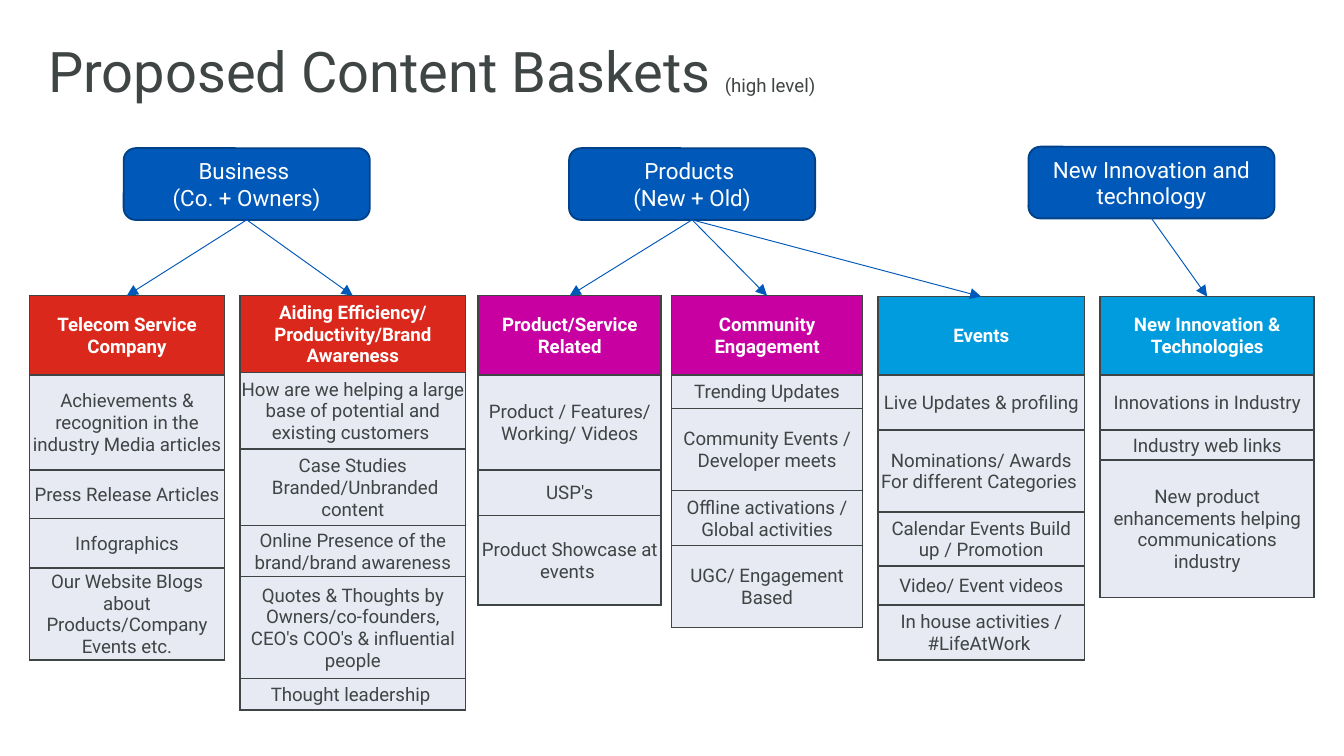
from dataclasses import dataclass

from lxml.etree import SubElement
from pptx import Presentation
from pptx.dml.color import RGBColor
from pptx.enum.shapes import MSO_CONNECTOR, MSO_SHAPE
from pptx.enum.text import MSO_ANCHOR, MSO_AUTO_SIZE, PP_ALIGN
from pptx.oxml.ns import qn
from pptx.slide import Slide
from pptx.table import _Cell
from pptx.text.text import TextFrame
from pptx.util import Pt

COLORS = {
    "ink": "3F4444", "white": "FFFFFF", "theme": "0059B9", "theme_edge": "004289",
    "red": "DA281C", "magenta": "C800A1", "cyan": "009CDE", "item": "E7EAF3",
}
FONT = "Roboto"
THEME_WIDTH, THEME_HEIGHT = 131.8, 38.4
FRAME_FORMAT = {
    "margin_left": Pt(5), "margin_right": Pt(5), "margin_top": Pt(3), "margin_bottom": Pt(3),
    "vertical_anchor": MSO_ANCHOR.MIDDLE, "word_wrap": True, "auto_size": MSO_AUTO_SIZE.NONE,
}
CELL_FORMAT = {
    "margin_left": Pt(0.7), "margin_right": Pt(0.7), "margin_top": Pt(0.7), "margin_bottom": 0,
    "vertical_anchor": MSO_ANCHOR.MIDDLE,
}


@dataclass
class Basket:
    """A one-column table: a coloured heading and its content items."""
    left: float
    top: float
    width: float
    color: str
    rows: list[tuple[float, str]]


@dataclass
class Theme:
    left: float
    top: float
    label: str
    baskets: list[Basket]


THEMES = [
    Theme(66.3, 79.4, "Business \v(Co. + Owners)", [
        Basket(15.8, 158.4, 104.4, "red", [
            (42.5, "Telecom Service Company"),
            (51, "Achievements & recognition in the industry Media articles"),
            (25.9, "Press Release Articles"),
            (26.6, "Infographics"),
            (49.2, "Our Website Blogs about Products/Company Events etc."),
        ]),
        Basket(128.6, 158.4, 120.8, "red", [
            (41.2, "Aiding Efficiency/ Productivity/Brand Awareness"),
            (41, "How are we helping a large base of potential and existing customers "),
            (41, "Case Studies\v Branded/Unbranded content"),
            (27.4, "Online Presence of the brand/brand awareness"),
            (54.6, "Quotes & Thoughts by Owners/co-founders, CEO's COO's & influential people"),
            (17, "Thought leadership "),
        ]),
    ]),
    Theme(304.9, 79.4, "Products \n(New + Old)", [
        Basket(256.2, 158.4, 98, "magenta", [
            (42.5, "Product/Service Related"),
            (51, "Product / Features/ Working/ Videos"),
            (24.3, "USP's"),
            (48, "Product Showcase at events "),
        ]),
        Basket(359.8, 158.4, 102.2, "magenta", [
            (42.5, "Community Engagement"),
            (18, "Trending Updates"),
            (44, "Community Events / Developer meets"),
            (29.4, "Offline activations / Global activities"),
            (44, "UGC/ Engagement Based"),
        ]),
        Basket(470.3, 158.9, 110.7, "cyan", [
            (42, "Events"),
            (29.5, "Live Updates & profiling"),
            (43.8, "Nominations/ Awards For different Categories "),
            (29.2, "Calendar Events Build up / Promotion"),
            (20.7, "Video/ Event videos"),
            (29.5, "In house activities / #LifeAtWork "),
        ]),
    ]),
    Theme(551, 78.6, "New Innovation and technology", [
        Basket(589.3, 158.9, 114.8, "cyan", [
            (42, "New Innovation & Technologies"),
            (29.5, "Innovations in Industry"),
            (16.2, "Industry web links"),
            (73.6, "New product enhancements helping communications\nindustry"),
        ]),
    ]),
]


def rgb(name: str) -> RGBColor:
    return RGBColor.from_string(COLORS[name])


def apply_format(target: object, values: dict) -> None:
    for attribute, value in values.items():
        setattr(target, attribute, value)


def style_text(frame: TextFrame, size: float, color: str, bold: bool = False) -> None:
    for paragraph in frame.paragraphs:
        paragraph.alignment = PP_ALIGN.CENTER
        for run in paragraph.runs:
            apply_format(run.font, {"name": FONT, "size": Pt(size), "bold": bold})
            run.font.color.rgb = rgb(color)


def add_title(slide: Slide, heading: str, remark: str) -> None:
    title = slide.shapes.title
    apply_format(title, {"left": Pt(20.9), "top": Pt(15.8), "width": Pt(509), "height": Pt(48.2)})
    apply_format(title.text_frame, FRAME_FORMAT)
    paragraph = title.text_frame.paragraphs[0]
    for text, size in ((heading, 30), (remark, 10)):
        run = paragraph.add_run()
        run.text = text
        run.font.size = Pt(size)
        run.font.name = FONT
        run.font.color.rgb = rgb("ink")
    apply_format(paragraph, {"alignment": PP_ALIGN.LEFT, "line_spacing": 0.9})


def add_theme_box(slide: Slide, theme: Theme) -> None:
    box = slide.shapes.add_shape(MSO_SHAPE.ROUNDED_RECTANGLE, Pt(theme.left), Pt(theme.top),
                                 Pt(THEME_WIDTH), Pt(THEME_HEIGHT))
    box.shadow.inherit = False
    box.fill.solid()
    box.fill.fore_color.rgb = rgb("theme")
    box.line.color.rgb = rgb("theme_edge")
    box.line.width = Pt(1)
    apply_format(box.text_frame, FRAME_FORMAT)
    box.text_frame.text = theme.label
    style_text(box.text_frame, 12, "white")


def add_borders(cell: _Cell) -> None:
    properties = cell._tc.get_or_add_tcPr()
    for position, side in enumerate(("a:lnL", "a:lnR", "a:lnT", "a:lnB")):
        border = properties.makeelement(qn(side), {"w": str(Pt(1))})
        fill = SubElement(border, qn("a:solidFill"))
        SubElement(fill, qn("a:srgbClr"), val=COLORS["ink"])
        properties.insert(position, border)  # borders must precede the cell fill


def add_basket(slide: Slide, basket: Basket) -> None:
    height = sum(row_height for row_height, _ in basket.rows)
    table = slide.shapes.add_table(len(basket.rows), 1, Pt(basket.left), Pt(basket.top),
                                   Pt(basket.width), Pt(height)).table
    table.horz_banding = False
    for index, (row_height, text) in enumerate(basket.rows):
        is_heading = index == 0
        table.rows[index].height = Pt(row_height)
        cell = table.cell(index, 0)
        apply_format(cell, CELL_FORMAT)
        cell.text = text
        style_text(cell.text_frame, 10, "white" if is_heading else "ink", is_heading)
        cell.fill.solid()
        cell.fill.fore_color.rgb = rgb(basket.color if is_heading else "item")
        add_borders(cell)


def add_arrow(slide: Slide, theme: Theme, basket: Basket) -> None:
    """Link the theme's bottom centre to the basket's top centre."""
    arrow = slide.shapes.add_connector(
        MSO_CONNECTOR.STRAIGHT,
        Pt(theme.left + THEME_WIDTH / 2), Pt(theme.top + THEME_HEIGHT),
        Pt(basket.left + basket.width / 2), Pt(basket.top))
    arrow.line.color.rgb = rgb("theme")
    arrow.line.width = Pt(0.5)
    SubElement(arrow.line._get_or_add_ln(), qn("a:tailEnd"), type="triangle")
    SubElement(arrow._element.spPr, qn("a:effectLst"))


def main() -> None:
    deck = Presentation()
    deck.slide_width, deck.slide_height = Pt(720), Pt(405)
    slide = deck.slides.add_slide(deck.slide_layouts.get_by_name("Title Only"))
    add_title(slide, "Proposed Content Baskets ", "(high level)")
    for theme in THEMES:
        add_theme_box(slide, theme)
        for basket in theme.baskets:
            add_basket(slide, basket)
            add_arrow(slide, theme, basket)
    deck.save("out.pptx")


if __name__ == "__main__":
    main()
